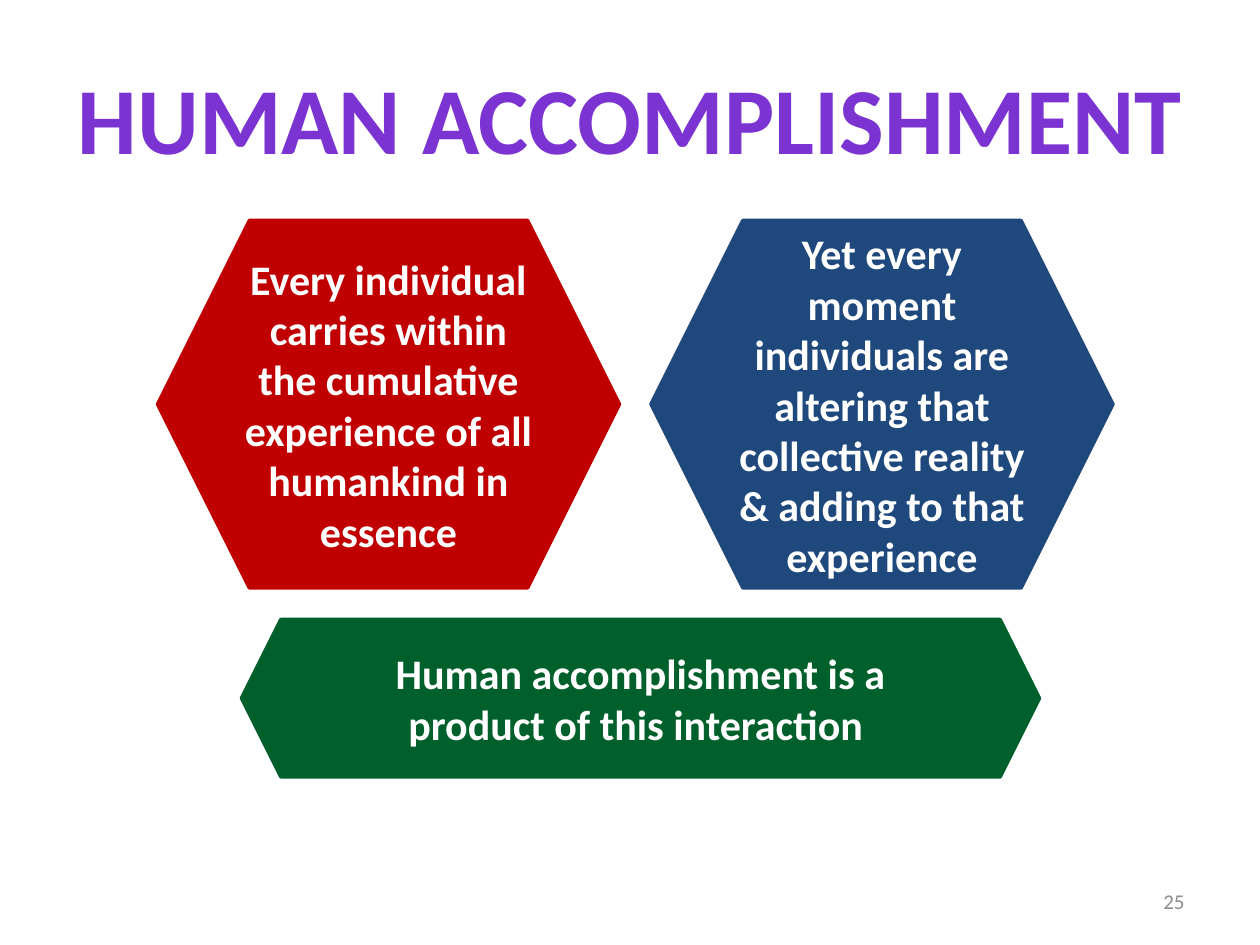
from pptx import Presentation
from pptx.dml.color import RGBColor
from pptx.enum.shapes import MSO_SHAPE
from pptx.enum.text import MSO_ANCHOR, MSO_AUTO_SIZE, PP_ALIGN
from pptx.util import Inches, Pt

HEX = MSO_SHAPE.HEXAGON
MIDDLE = MSO_ANCHOR.MIDDLE
FIXED = MSO_AUTO_SIZE.NONE
CENTER, RIGHT = PP_ALIGN.CENTER, PP_ALIGN.RIGHT

PURPLE = RGBColor(0x7B, 0x34, 0xD2)
RED = RGBColor(0xC0, 0x00, 0x00)
BLUE = RGBColor(0x1F, 0x49, 0x7D)
GREEN = RGBColor(0x00, 0x60, 0x2B)
WHITE = RGBColor(0xFF, 0xFF, 0xFF)
GRAY = RGBColor(0x8C, 0x8C, 0x8C)

COLS, ROWS = 120, 90
SIDE, TALL, GAP = 44, 35, 3
LEFT, TOP = 15, 21


def write(shape, text, size=24, color=WHITE, bold=True, align=CENTER):
    frame = shape.text_frame
    frame.word_wrap = True
    frame.auto_size = FIXED
    frame.vertical_anchor = MIDDLE
    line = frame.paragraphs[0]
    line.alignment = align
    run = line.add_run()
    run.text = text
    run.font.name = "Calibri"
    run.font.size = Pt(size)
    run.font.bold = bold
    run.font.color.rgb = color


class Deck:
    """Holds the grid, the style and the current slide."""

    def __init__(self):
        self.file = Presentation()
        self.file.slide_width = Inches(10)
        self.file.slide_height = Inches(7.5)
        self.slide = self.file.slides.add_slide(self.file.slide_layouts[5])

    def box(self, col, row, wide, high):
        across = self.file.slide_width / COLS
        down = self.file.slide_height / ROWS
        return [round(n) for n in (col * across, row * down, wide * across, high * down)]

    def title(self, text, *area):
        shape = self.slide.shapes.title
        shape.left, shape.top, shape.width, shape.height = self.box(*area)
        write(shape, text, size=54, color=PURPLE)

    def number(self, text, *area):
        shape = self.slide.shapes.add_textbox(*self.box(*area))
        write(shape, text, size=12, color=GRAY, bold=False, align=RIGHT)

    def hexagon(self, text, color, *area):
        shape = self.slide.shapes.add_shape(HEX, *self.box(*area))
        shape.shadow.inherit = False
        shape.fill.solid()
        shape.fill.fore_color.rgb = color
        shape.line.color.rgb = color
        shape.line.width = Pt(2)
        write(shape, text)


def main():
    deck = Deck()
    deck.title("HUMAN ACCOMPLISHMENT", 6, 3.6, 108, 15)
    deck.number("25", 86, 83.4, 28, 4.8)
    pair = [
        ("Every individual carries within the cumulative experience of all humankind in essence", RED),
        ("Yet every moment individuals are altering that collective reality & adding to that experience", BLUE),
    ]
    for i, (text, color) in enumerate(pair):
        deck.hexagon(text, color, LEFT + i * (SIDE + GAP), TOP, SIDE, TALL)
    deck.hexagon("Human accomplishment is a product of this interaction ", GREEN,
                 23, TOP + TALL + GAP, 76, 15)
    deck.file.save("out.pptx")


if __name__ == "__main__":
    main()
